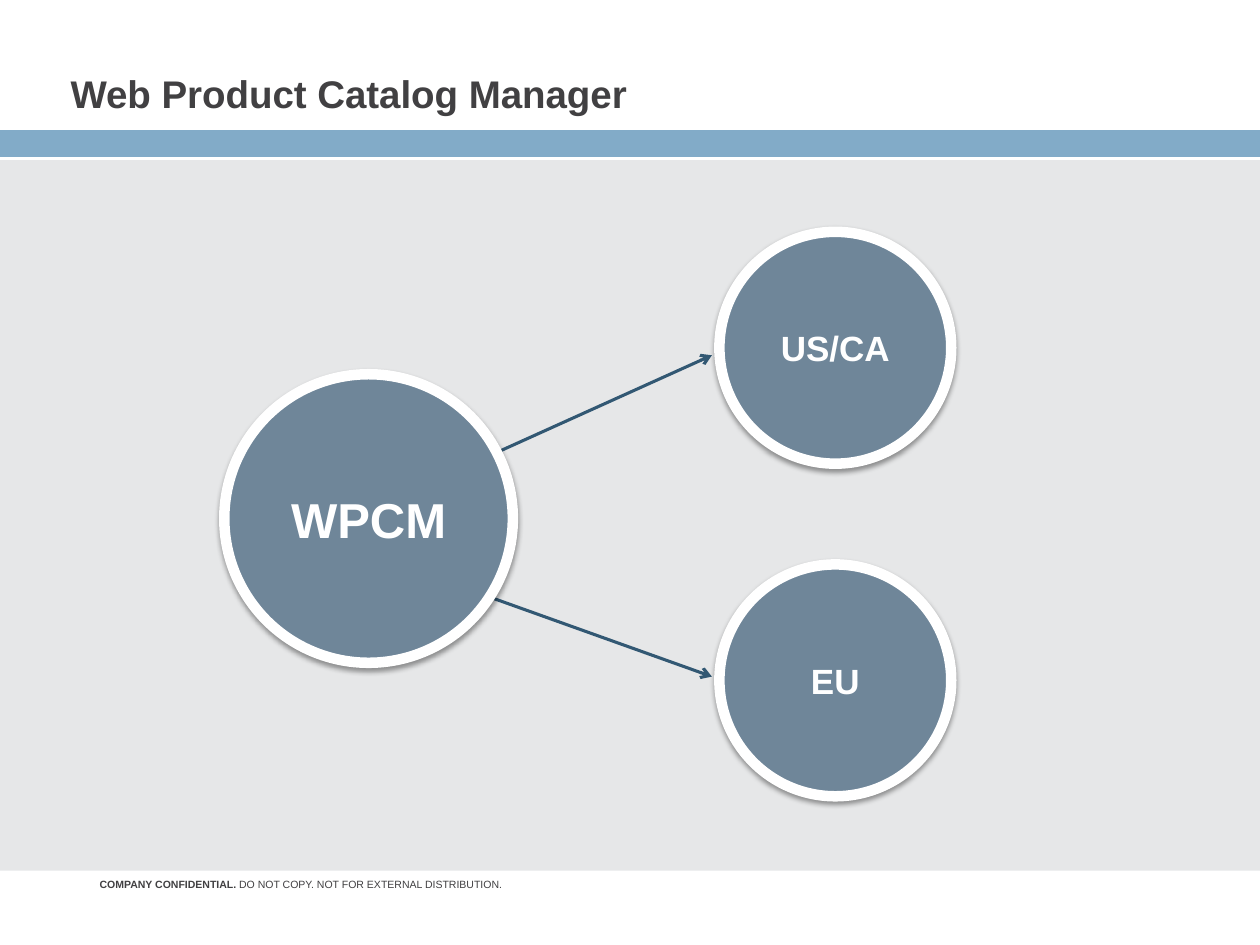
from dataclasses import dataclass

from lxml.etree import SubElement
from pptx import Presentation
from pptx.dml.color import RGBColor
from pptx.enum.shapes import MSO_CONNECTOR as Connector, MSO_SHAPE as Shape
from pptx.enum.text import MSO_ANCHOR as Anchor, MSO_AUTO_SIZE as AutoSize, PP_ALIGN as Align
from pptx.oxml.ns import qn
from pptx.util import Inches, Pt

WHITE = RGBColor(0xFF, 0xFF, 0xFF)
PALE_GREY = RGBColor(0xE6, 0xE7, 0xE8)
SKY = RGBColor(0x82, 0xAB, 0xC8)
CHARCOAL = RGBColor(0x41, 0x40, 0x42)
NAVY = RGBColor(0x32, 0x58, 0x73)
SLATE = RGBColor(0x6F, 0x86, 0x99)


@dataclass
class Panel:
    box: tuple[float, float, float, float]
    fill: RGBColor
    line_width: float = 0


@dataclass
class Circle:
    text: str
    left: float
    top: float
    diameter: float
    size: int


@dataclass
class Arrow:
    start: tuple[float, float]
    end: tuple[float, float]


PANELS = [
    Panel((0, 1.26, 10, 5.65), PALE_GREY),
    Panel((-0.02, 1.02, 10.04, 0.24), SKY, 2),
]
ARROWS = [
    Arrow((3.89, 4.74), (5.65, 5.37)),
    Arrow((3.79, 3.66), (5.65, 2.82)),
]
CIRCLES = [
    Circle("WPCM", 1.78, 2.97, 2.29, 28),
    Circle("US/CA", 5.71, 1.84, 1.84, 20),
    Circle("EU", 5.71, 4.48, 1.84, 20),
]


def set_all(target, values: dict) -> None:
    for name, value in values.items():
        setattr(target, name, value)


def add_run(p, text: str, size: int, color: RGBColor, bold: bool = True) -> None:
    r = p.add_run()
    r.text = text
    set_all(r.font, {"name": "Arial", "size": Pt(size), "bold": bold})
    r.font.color.rgb = color


def format_frame(tf, anchor: Anchor, wrap: bool = True) -> None:
    set_all(tf, {
        "margin_left": 0, "margin_top": 0, "margin_right": 0, "margin_bottom": 0,
        "vertical_anchor": anchor, "word_wrap": wrap, "auto_size": AutoSize.NONE,
    })


def add_filled(s, kind: Shape, box: tuple, fill: RGBColor, line_width: float):
    sp = s.shapes.add_shape(kind, *map(Inches, box))
    sp.shadow.inherit = False
    sp.fill.solid()
    sp.fill.fore_color.rgb = fill
    if line_width:
        sp.line.color.rgb = WHITE
        sp.line.width = Pt(line_width)
    else:
        sp.line.fill.background()
    return sp


def add_circle(s, circle: Circle) -> None:
    box = (circle.left, circle.top, circle.diameter, circle.diameter)
    sp = add_filled(s, Shape.OVAL, box, SLATE, 6)
    effects = sp._element.spPr.find(qn("a:effectLst"))
    shadow = SubElement(effects, qn("a:outerShdw"), blurRad=str(Pt(3.1)),
                        dist=str(Pt(1.6)), dir="5400000", rotWithShape="0")
    color = SubElement(shadow, qn("a:srgbClr"), val="000000")
    SubElement(color, qn("a:alpha"), val="38000")
    tf = sp.text_frame
    tf.vertical_anchor = Anchor.MIDDLE
    p = tf.paragraphs[0]
    p.alignment = Align.CENTER
    add_run(p, circle.text, circle.size, WHITE)


def add_arrow(s, arrow: Arrow) -> None:
    line = s.shapes.add_connector(Connector.STRAIGHT, *map(Inches, arrow.start + arrow.end))
    line.line.color.rgb = NAVY
    line.line.width = Pt(1.75)
    SubElement(line.line._get_or_add_ln(), qn("a:tailEnd"), type="arrow")
    SubElement(line._element.spPr, qn("a:effectLst"))


def add_title(s, text: str) -> None:
    title = s.shapes.title
    set_all(title, {"left": Inches(0.56), "top": Inches(0.17),
                    "width": Inches(8.65), "height": Inches(0.75)})
    format_frame(title.text_frame, Anchor.BOTTOM)
    p = title.text_frame.paragraphs[0]
    set_all(p, {"alignment": Align.LEFT, "line_spacing": Pt(28)})
    add_run(p, text, 22, CHARCOAL)


def add_footer(s) -> None:
    sp = s.shapes.add_textbox(*map(Inches, (0.79, 6.97, 3.72, 0.1)))
    format_frame(sp.text_frame, Anchor.MIDDLE, wrap=False)
    p = sp.text_frame.paragraphs[0]
    p.alignment = Align.LEFT
    add_run(p, "COMPANY CONFIDENTIAL. ", 6, CHARCOAL)
    add_run(p, "DO NOT COPY. NOT FOR EXTERNAL DISTRIBUTION.", 6, CHARCOAL, bold=False)


def main() -> None:
    prs = Presentation()
    set_all(prs, {"slide_width": Inches(10), "slide_height": Inches(7.5)})
    s = prs.slides.add_slide(prs.slide_layouts[5])
    for panel in PANELS:
        add_filled(s, Shape.RECTANGLE, panel.box, panel.fill, panel.line_width)
    add_footer(s)
    add_title(s, "Web Product Catalog Manager")
    for arrow in ARROWS:
        add_arrow(s, arrow)
    for circle in CIRCLES:
        add_circle(s, circle)
    prs.save("out.pptx")


if __name__ == "__main__":
    main()
